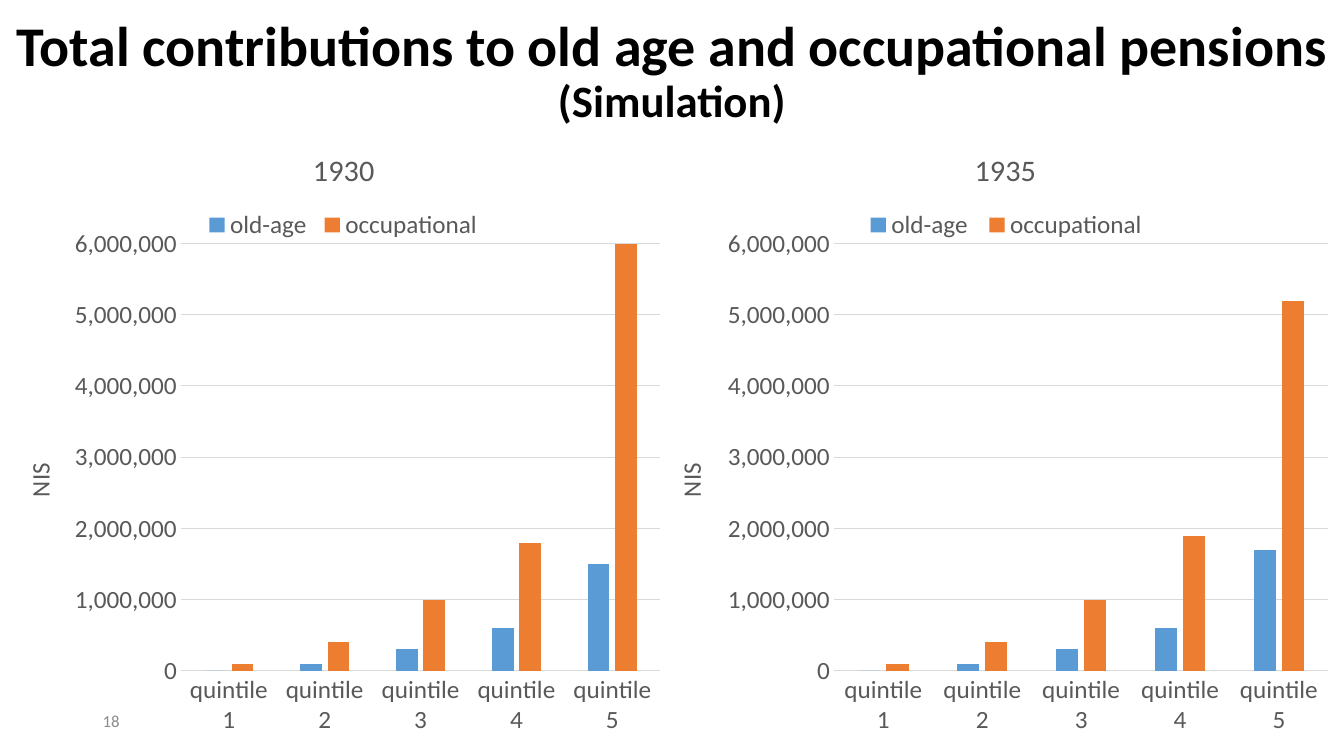
from lxml import etree
from pptx import Presentation
from pptx.chart.data import CategoryChartData
from pptx.dml.color import RGBColor
from pptx.enum.chart import XL_CHART_TYPE, XL_LEGEND_POSITION, XL_TICK_MARK
from pptx.enum.text import MSO_ANCHOR, PP_ALIGN
from pptx.oxml.ns import qn
from pptx.util import Inches, Pt

COLUMN = XL_CHART_TYPE.COLUMN_CLUSTERED
TOP = XL_LEGEND_POSITION.TOP
NONE = XL_TICK_MARK.NONE
MIDDLE = MSO_ANCHOR.MIDDLE
LEFT, CENTER = PP_ALIGN.LEFT, PP_ALIGN.CENTER
FACE = "Calibri"
COLORS = {"black": "000000", "text": "595959", "grid": "D9D9D9",
          "num": "8C8C8C", "old-age": "5B9BD5", "occupational": "ED7D31"}
CATS = [f"quintile {n}" for n in range(1, 6)]
CHARTS = [
    ("1930", (0.17, 1.25, 6.47, 6.04), (0.251, 0.196, 0.735, 0.712), {
        "old-age": (0, 100000, 300000, 600000, 1500000),
        "occupational": (100000, 400000, 1000000, 1800000, 6000000)}),
    ("1935", (6.63, 1.25, 6.7, 6.04), (0.245, 0.196, 0.732, 0.712), {
        "old-age": (0, 100000, 300000, 600000, 1700000),
        "occupational": (100000, 400000, 1000000, 1900000, 5200000)}),
]


def color(name):
    """Return the named colour."""
    return RGBColor.from_string(COLORS[name])


def style(font, size, name, bold=False):
    """Set face, size, colour and weight of a font."""
    font.name, font.size, font.bold = FACE, Pt(size), bold
    font.color.rgb = color(name)


def place(node, index, box, inner=False):
    """Give a chart part a fixed place, in fractions of the chart."""
    for old in node.findall(qn("c:layout")):
        node.remove(old)
    layout = etree.Element(qn("c:layout"))
    node.insert(index, layout)
    manual = etree.SubElement(layout, qn("c:manualLayout"))
    items = [("layoutTarget", "inner")] if inner else []
    items += [("xMode", "edge"), ("yMode", "edge")]
    items += zip("xywh", box)
    for tag, value in items:
        etree.SubElement(manual, qn(f"c:{tag}")).set("val", str(value))


def label(part, text, size, spot):
    """Write a chart or axis title at a spot."""
    para = part.text_frame.paragraphs[0]
    run = para.add_run()
    run.text = text
    style(run.font, size, "text")
    place(part._element, 1, spot)


def add_head(slide, box):
    """Fill the title placeholder with its two lines."""
    title = slide.shapes.title
    title.left, title.top, title.width, title.height = map(Inches, box)
    frame = title.text_frame
    frame.word_wrap = True
    frame.vertical_anchor = MIDDLE
    para = frame.paragraphs[0]
    para.alignment, para.line_spacing = CENTER, 0.9
    run = para.add_run()
    run.text = "Total contributions to old age and occupational pensions"
    style(run.font, 40, "black", True)
    para.add_line_break()
    run = para.add_run()
    run.text = "(Simulation)"
    style(run.font, 32, "black", True)


def add_bars(slide, name, box, plot_box, rows):
    """Draw one year's column chart in its box."""
    data = CategoryChartData(number_format="#,##0")
    data.categories = CATS
    for key, vals in rows.items():
        data.add_series(key, vals)
    chart = slide.shapes.add_chart(COLUMN, *map(Inches, box), data).chart
    style(chart.font, 18, "text")
    chart.has_title = True
    label(chart.chart_title, name, 21.6, (0.445, 0.03))

    chart.has_legend = True
    legend = chart.legend
    legend.position, legend.include_in_layout = TOP, False
    style(legend.font, 18, "text")
    place(legend._element, 1, (0.28, 0.14, 0.44, 0.05))

    plot = chart.plots[0]
    plot.gap_width, plot.overlap, plot.vary_by_categories = 219, -27, False
    for bars in plot.series:
        bars.format.fill.solid()
        bars.format.fill.fore_color.rgb = color(bars.name)
        bars.invert_if_negative = False

    cat, val = chart.category_axis, chart.value_axis
    for axis in (cat, val):
        axis.major_tick_mark = axis.minor_tick_mark = NONE
        style(axis.tick_labels.font, 18, "text")
    val.minimum_scale, val.maximum_scale, val.major_unit = 0, 6000000, 1000000
    val.tick_labels.number_format = "#,##0"
    val.tick_labels.number_format_is_linked = False
    val.format.line.fill.background()
    for line in (cat.format.line, val.major_gridlines.format.line):
        line.color.rgb, line.width = color("grid"), Pt(0.75)
    label(val.axis_title, "NIS", 18, (0.001, 0.555))
    body = val.axis_title.text_frame._txBody.bodyPr
    body.set("rot", "-5400000")
    body.set("vert", "horz")
    place(plot._element.getparent(), 0, plot_box, True)


def add_num(slide, box):
    """Write the slide number."""
    frame = slide.shapes.add_textbox(*map(Inches, box)).text_frame
    frame.word_wrap, frame.vertical_anchor = True, MIDDLE
    para = frame.paragraphs[0]
    para.alignment = LEFT
    run = para.add_run()
    run.text = "18"
    style(run.font, 12, "num")


def main():
    """Build and save the slide."""
    deck = Presentation()
    deck.slide_width, deck.slide_height = Inches(13.33), Inches(7.5)
    slide = deck.slides.add_slide(deck.slide_layouts[5])
    add_head(slide, (0, 0, 13.33, 1.45))
    for chart in CHARTS:
        add_bars(slide, *chart)
    add_num(slide, (0.92, 6.95, 3, 0.4))
    deck.save("out.pptx")


if __name__ == "__main__":
    main()
